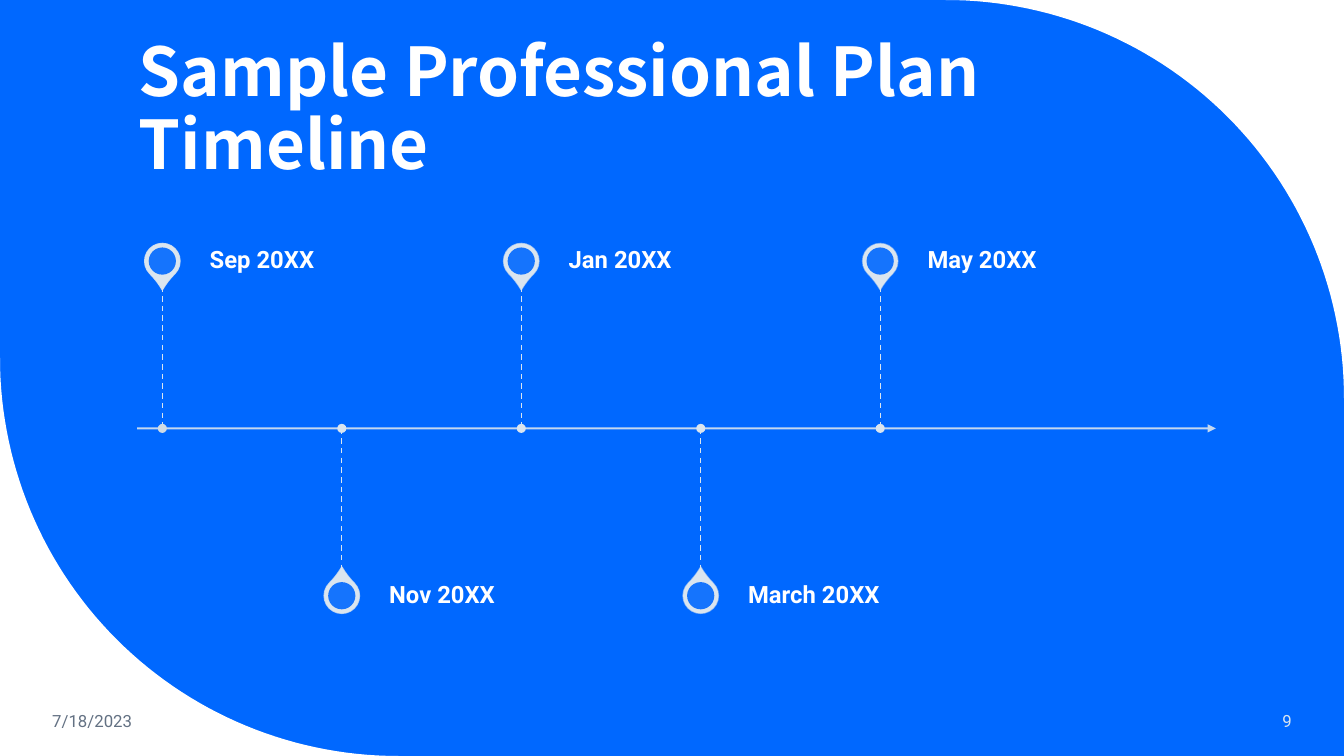
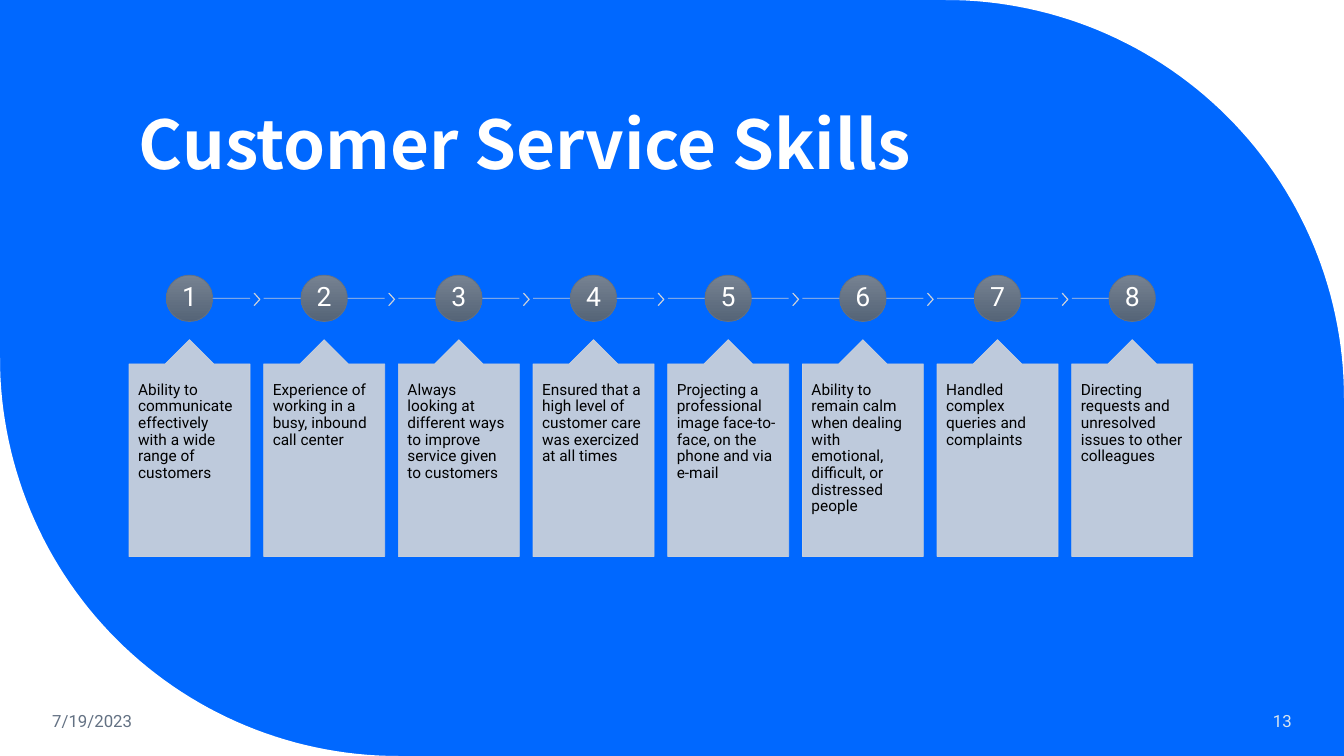
import math
from dataclasses import dataclass

import pptx
import pptx.dml.color
import pptx.enum.dml
import pptx.enum.shapes
import pptx.enum.text
import pptx.oxml.ns
import pptx.shapes.autoshape
import pptx.shapes.connector
import pptx.slide
import pptx.text.text
import pptx.util
from lxml import etree

Inches = pptx.util.Inches
Pt = pptx.util.Pt
Shape = pptx.shapes.autoshape.Shape
Slide = pptx.slide.Slide
Kind = pptx.enum.shapes.MSO_SHAPE
Align = pptx.enum.text.PP_ALIGN
Anchor = pptx.enum.text.MSO_ANCHOR
qn = pptx.oxml.ns.qn


@dataclass(frozen=True)
class Theme:
    blue: str = "0068FF"
    white: str = "FFFFFF"
    black: str = "000000"
    pale: str = "DAE5EF"
    pale_shade: str = "D0DBE4"
    card: str = "D3D5D9"
    slate: str = "637183"
    badge_top: str = "768291"
    badge_bottom: str = "556477"
    title_font: str = "Noto Sans CJK KR"
    body_font: str = "Roboto"
    title_size: float = 48
    badge_size: float = 19
    label_size: float = 17
    footer_size: float = 12
    card_size: float = 11


THEME = Theme()
SLIDE_WIDTH, SLIDE_HEIGHT = 13.33, 7.5


@dataclass(frozen=True)
class Box:
    left: float
    top: float
    width: float
    height: float


@dataclass(frozen=True)
class TextStyle:
    size: float
    color: str
    font: str = THEME.body_font
    bold: bool = False
    align: Align = Align.LEFT
    anchor: Anchor = Anchor.MIDDLE
    spacing: float = 0.9
    insets: tuple[float, float, float, float] = (0.1, 0.05, 0.1, 0.05)


@dataclass(frozen=True)
class Milestone:
    date: str
    above: bool
    dot_color: str = THEME.pale


TITLE = TextStyle(THEME.title_size, THEME.white, THEME.title_font, True, anchor=Anchor.BOTTOM)
DATE = TextStyle(THEME.footer_size, THEME.slate, spacing=1)
PAGE = TextStyle(THEME.footer_size, THEME.pale, align=Align.RIGHT, spacing=1)
LABEL = TextStyle(THEME.label_size, THEME.white, bold=True, insets=(0, 0, 0.12, 0))
BADGE = TextStyle(THEME.badge_size, THEME.white, align=Align.CENTER, insets=(0, 0, 0, 0))
CARD = TextStyle(THEME.card_size, THEME.black, anchor=Anchor.TOP, insets=(0.09, 0.18, 0.09, 0.18))

MILESTONES = [
    Milestone("Sep 20XX", True, THEME.pale_shade),
    Milestone("Nov 20XX", False),
    Milestone("Jan 20XX", True),
    Milestone("March 20XX", False),
    Milestone("May 20XX", True),
]

SKILLS = [
    "Ability to communicate effectively with a wide range of customers",
    "Experience of working in a busy, inbound call center",
    "Always looking at different ways to improve service given to customers",
    "Ensured that a high level of customer care was exercized at all times",
    "Projecting a professional image face-to-face, on the phone and via e-mail",
    "Ability to remain calm when dealing with emotional, difficult, or distressed people",
    "Handled complex queries and complaints",
    "Directing requests and unresolved issues to other colleagues",
]


def rgb(color: str) -> pptx.dml.color.RGBColor:
    return pptx.dml.color.RGBColor.from_string(color)


def set_opacity(properties: etree.ElementBase, percent: int) -> None:
    for color in properties.iter(qn("a:srgbClr")):
        etree.SubElement(color, qn("a:alpha")).set("val", str(percent * 1000))


def write(frame: pptx.text.text.TextFrame, text: str, style: TextStyle, wrap: bool = True) -> None:
    frame.word_wrap = wrap
    frame.vertical_anchor = style.anchor
    (frame.margin_left, frame.margin_top,
     frame.margin_right, frame.margin_bottom) = map(Inches, style.insets)
    frame.text = text
    paragraph = frame.paragraphs[0]
    paragraph.alignment = style.align
    paragraph.line_spacing = style.spacing
    paragraph.font.name = style.font
    paragraph.font.size = Pt(style.size)
    paragraph.font.bold = style.bold
    paragraph.font.color.rgb = rgb(style.color)


def add_text(slide: Slide, box: Box, text: str, style: TextStyle) -> None:
    holder = slide.shapes.add_textbox(
        Inches(box.left), Inches(box.top), Inches(box.width), Inches(box.height))
    write(holder.text_frame, text, style)


def paint(shape: Shape, fill: str, line: str | None = None, width: float = 1) -> None:
    shape.shadow.inherit = False
    shape.fill.solid()
    shape.fill.fore_color.rgb = rgb(fill)
    if line is None:
        shape.line.fill.background()
    else:
        shape.line.color.rgb = rgb(line)
        shape.line.width = Pt(width)


def add_shape(slide: Slide, kind: Kind, box: Box, fill: str,
              line: str | None = None, width: float = 1) -> Shape:
    shape = slide.shapes.add_shape(
        kind, Inches(box.left), Inches(box.top), Inches(box.width), Inches(box.height))
    paint(shape, fill, line, width)
    return shape


def add_circle(slide: Slide, x: float, y: float, size: float, fill: str,
               line: str | None = None, width: float = 1) -> Shape:
    box = Box(x - size / 2, y - size / 2, size, size)
    return add_shape(slide, Kind.OVAL, box, fill, line, width)


def add_line(slide: Slide, start: tuple[float, float], end: tuple[float, float],
             color: str, width: float) -> pptx.shapes.connector.Connector:
    line = slide.shapes.add_connector(
        pptx.enum.shapes.MSO_CONNECTOR.STRAIGHT, *map(Inches, (*start, *end)))
    line.line.color.rgb = rgb(color)
    line.line.width = Pt(width)
    etree.SubElement(line.element.spPr, qn("a:effectLst"))
    return line


def add_corner(slide: Slide, corner: tuple[float, float],
               center: tuple[float, float], start_degrees: int) -> None:
    radius, steps = 3.95, 60
    arc = []
    for step in range(steps + 1):
        angle = math.radians(start_degrees + 90 * step / steps)
        arc.append((Inches(center[0] + radius * math.cos(angle)),
                    Inches(center[1] + radius * math.sin(angle))))
    outline = slide.shapes.build_freeform(Inches(corner[0]), Inches(corner[1]))
    outline.add_line_segments(arc, close=True)
    paint(outline.convert_to_shape(), THEME.white)


def add_base(deck: pptx.presentation.Presentation, title: str, date: str, page: str) -> Slide:
    slide = deck.slides.add_slide(deck.slide_layouts[6])
    slide.background.fill.solid()
    slide.background.fill.fore_color.rgb = rgb(THEME.blue)
    add_corner(slide, (SLIDE_WIDTH, 0), (9.38, 3.95), -90)
    add_corner(slide, (0, SLIDE_HEIGHT), (3.95, 3.55), 90)
    add_text(slide, Box(1.28, 0.42, 10.69, 1.45), title, TITLE)
    add_text(slide, Box(0.42, 6.95, 1.86, 0.4), date, DATE)
    add_text(slide, Box(11.1, 6.95, 1.81, 0.4), page, PAGE)
    return slide


def add_milestone(slide: Slide, milestone: Milestone, x: float, axis_y: float,
                  line_opacity: int) -> None:
    label_top, label_height, pin_size = (2.34 if milestone.above else 5.66), 0.5, 0.35
    pin_y = label_top + label_height / 2
    pin = add_shape(slide, Kind.TEAR,
                    Box(x - pin_size / 2, pin_y - pin_size / 2, pin_size, pin_size),
                    THEME.pale, THEME.pale)
    pin.adjustments[0] = 1.15
    pin.rotation = 135 if milestone.above else 315
    set_opacity(pin.element.spPr.find(qn("a:ln")), line_opacity)
    eye = add_circle(slide, x, pin_y, 0.27, THEME.blue)
    set_opacity(eye.element.spPr, 90)
    add_text(slide, Box(x + 0.47, label_top, 2.53, label_height), milestone.date, LABEL)
    stem_y = label_top + label_height if milestone.above else label_top
    stem = add_line(slide, (x, min(stem_y, axis_y)), (x, max(stem_y, axis_y)), THEME.pale, 1)
    stem.line.dash_style = pptx.enum.dml.MSO_LINE.DASH
    add_circle(slide, x, axis_y, 0.09, milestone.dot_color)


def build_timeline(deck: pptx.presentation.Presentation) -> None:
    slide = add_base(deck, "Sample Professional Plan Timeline", "7/18/2023", "9")
    axis_y, first_x, pitch = 4.25, 1.61, 1.78
    axis = add_line(slide, (1.36, axis_y), (12.06, axis_y), THEME.pale, 1.5)
    axis_outline = axis.element.spPr.find(qn("a:ln"))
    etree.SubElement(axis_outline, qn("a:tailEnd")).set("type", "triangle")
    set_opacity(axis_outline, 90)
    for index, milestone in enumerate(MILESTONES):
        add_milestone(slide, milestone, first_x + index * pitch, axis_y, 90 - 10 * index)


def add_skill(slide: Slide, number: int, skill: str, left: float) -> None:
    width, track_y = 1.2, 2.96
    center = left + width / 2
    is_first, is_last = number == 1, number == len(SKILLS)
    track = add_line(slide, (center if is_first else left, track_y),
                     (center if is_last else left + width, track_y), THEME.card, 0.5)
    set_opacity(track.element.spPr, 90)
    if not is_last:
        step = add_shape(slide, Kind.CHEVRON, Box(left + 1.24, track_y - 0.05, 0.06, 0.12),
                         THEME.card, THEME.card, 0.5)
        step.adjustments[0] = 0.9
        set_opacity(step.element.spPr, 90)

    badge = add_circle(slide, center, track_y, 0.46, THEME.slate, THEME.slate, 0.5)
    badge.fill.gradient()
    badge.fill.gradient_angle = 270
    for stop, color in zip(badge.fill.gradient_stops, (THEME.badge_top, THEME.badge_bottom)):
        stop.color.rgb = rgb(color)
    write(badge.text_frame, str(number), BADGE, wrap=False)

    card = add_shape(slide, Kind.UP_ARROW_CALLOUT, Box(left, 3.37, width, 2.15),
                     THEME.card, THEME.card, 0.5)
    for index, value in enumerate((0.5, 0.2, 0.2, 1)):
        card.adjustments[index] = value
    set_opacity(card.element.spPr, 90)
    write(card.text_frame, skill, CARD)


def build_skills(deck: pptx.presentation.Presentation) -> None:
    slide = add_base(deck, "Customer Service Skills", "7/19/2023", "13")
    first_left, last_left = 1.28, 10.63
    pitch = (last_left - first_left) / (len(SKILLS) - 1)
    for index, skill in enumerate(SKILLS):
        add_skill(slide, index + 1, skill, first_left + index * pitch)


def main() -> None:
    deck = pptx.Presentation()
    deck.slide_width = Inches(SLIDE_WIDTH)
    deck.slide_height = Inches(SLIDE_HEIGHT)
    build_timeline(deck)
    build_skills(deck)
    deck.save("out.pptx")


if __name__ == "__main__":
    main()
